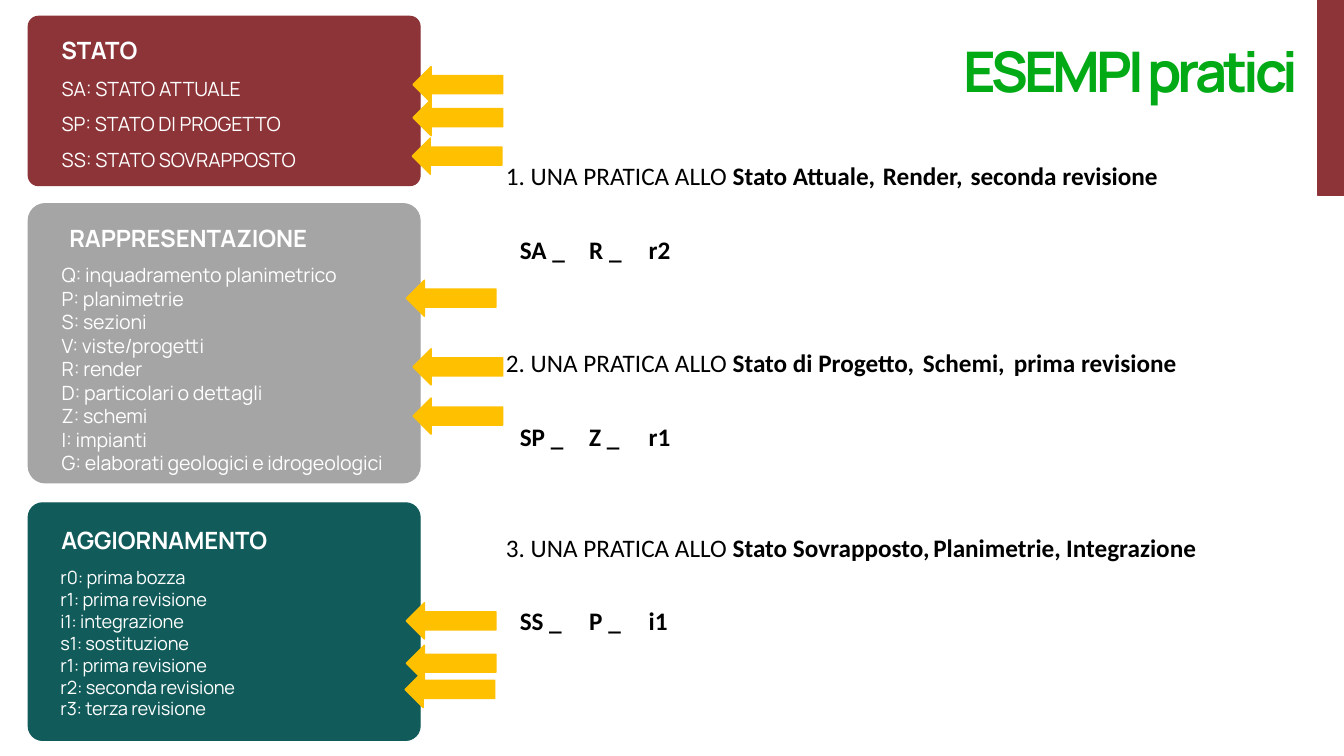
from dataclasses import dataclass

from lxml.etree import SubElement
from pptx import Presentation
from pptx.dml.color import RGBColor
from pptx.enum.shapes import MSO_SHAPE
from pptx.enum.text import MSO_ANCHOR, MSO_AUTO_SIZE, PP_ALIGN
from pptx.oxml.ns import qn
from pptx.util import Cm, Pt


@dataclass(frozen=True)
class Theme:
    red: str = "8C3438"
    grey: str = "A5A5A5"
    teal: str = "115B5A"
    green: str = "02AA16"
    amber: str = "FFC000"
    white: str = "FFFFFF"
    black: str = "000000"
    panel_font: str = "Manrope"
    example_font: str = "Calibri"
    title_size: float = 40
    heading_size: float = 17
    list_size: float = 14
    small_list_size: float = 13
    example_size: float = 18


THEME = Theme()

# colour, top, height; heading left, top; list left, top, width, height;
# list size, line spacing, placeholder index, heading, items
PANELS = [
    (THEME.red, 0.41, 4.27, (1.3, 0.76), (1.3, 1.52, 8.31, 2.87),
     THEME.list_size, 1.5, 1, "STATO",
     ["SA: STATO ATTUALE", "SP: STATO DI PROGETTO", "SS: STATO SOVRAPPOSTO"]),
    (THEME.grey, 5.13, 7.04, (1.5, 5.49), (1.3, 6.5, 10.16, 5.64),
     THEME.list_size, 1.0, 2, "RAPPRESENTAZIONE",
     ["Q: inquadramento planimetrico", "P: planimetrie", "S: sezioni",
      "V: viste/progetti", "R: render", "D: particolari o dettagli",
      "Z: schemi", "I: impianti", "G: elaborati geologici e idrogeologici"]),
    (THEME.teal, 12.67, 5.99, (1.3, 13.11), (1.27, 14.15, 8.31, 4.83),
     THEME.small_list_size, 1.0, 4, "AGGIORNAMENTO",
     ["r0: prima bozza", "r1: prima revisione", "i1: integrazione",
      "s1: sostituzione", "r1: prima revisione", "r2: seconda revisione",
      "r3: terza revisione"]),
]

# top; opening words, bold state, width; further phrases (text, left, width); codes
EXAMPLES = [
    (3.91, "1. UNA PRATICA ALLO ", "Stato Attuale,", 9.96,
     [("Render,", 22, 2.62), ("seconda revisione", 24.21, 5.54)],
     ["SA _", "R _", "r2"]),
    (8.64, "2. UNA PRATICA ALLO ", "Stato di Progetto,", 11.05,
     [("Schemi,", 23.01, 2.74), ("prima revisione", 25.3, 6.83)],
     ["SP _", "Z _", "r1"]),
    (13.28, "3. UNA PRATICA ALLO ", "Stato Sovrapposto,", 11.89,
     [("Planimetrie,", 23.27, 3.94), ("Integrazione", 26.62, 5.54)],
     ["SS _", "P _", "i1"]),
]
CODE_LEFTS = [12.85, 14.6, 16.1]
CODE_DROP = 1.86
LINE_HEIGHT = 1.02

ARROWS = [(10.41, 1.68), (10.41, 2.51), (10.39, 3.48),
          (10.24, 7.06), (10.41, 8.79), (10.41, 10.03),
          (10.24, 15.19), (10.24, 16.26), (10.21, 16.92)]


def set_all(target, values):
    for name, value in values.items():
        setattr(target, name, value)


def place(shape, left, top, width, height):
    set_all(shape, {"left": Cm(left), "top": Cm(top),
                    "width": Cm(width), "height": Cm(height)})


def set_frame(box, anchor):
    set_all(box.text_frame, {"word_wrap": True, "vertical_anchor": anchor,
                             "auto_size": MSO_AUTO_SIZE.SHAPE_TO_FIT_TEXT})


def add_span(para, text, font, size, color, bold=False, spacing=None):
    """Add a run; spacing is the letter spacing in points."""
    span = para.add_run()
    span.text = text
    set_all(span.font, {"name": font, "size": Pt(size), "bold": bold})
    span.font.color.rgb = RGBColor.from_string(color)
    if spacing is not None:
        span.font._element.set("spc", str(round(spacing * 100)))


def add_box(page, frame, anchor=MSO_ANCHOR.TOP):
    """Add a text box and return its first paragraph."""
    box = page.shapes.add_textbox(*map(Cm, frame))
    set_frame(box, anchor)
    return box.text_frame.paragraphs[0]


def add_block(page, kind, frame, color, line_width=1):
    block = page.shapes.add_shape(kind, *map(Cm, frame))
    block.shadow.inherit = False
    block.fill.solid()
    block.fill.fore_color.rgb = RGBColor.from_string(color)
    block.line.color.rgb = RGBColor.from_string(color)
    block.line.width = Pt(line_width)
    return block


def fill_title(page):
    title = page.shapes.title
    place(title, 23.22, -0.43, 10.54, 3.18)
    set_frame(title, MSO_ANCHOR.BOTTOM)
    para = title.text_frame.paragraphs[0]
    set_all(para, {"alignment": PP_ALIGN.CENTER, "line_spacing": Pt(94)})
    add_span(para, "ESEMPI pratici", THEME.panel_font, THEME.title_size,
             THEME.green, bold=True, spacing=-2.9)


def fill_list(body, frame, items, size, line_spacing):
    place(body, *frame)
    set_frame(body, MSO_ANCHOR.TOP)
    for number, item in enumerate(items):
        text = body.text_frame
        para = text.add_paragraph() if number else text.paragraphs[0]
        set_all(para, {"alignment": PP_ALIGN.LEFT, "line_spacing": line_spacing,
                       "space_before": Pt(0), "space_after": Pt(0)})
        properties = para._p.get_or_add_pPr()
        properties.set("marL", "0")
        properties.set("indent", "0")
        SubElement(properties, qn("a:buNone"))
        add_span(para, item, THEME.panel_font, size, THEME.white, spacing=-0.1)


def add_panel(page, color, top, height, heading_at, list_frame, size,
              line_spacing, index, heading, items):
    panel = add_block(page, MSO_SHAPE.ROUNDED_RECTANGLE,
                      (0.71, top, 9.88, height), color, 0.75)
    panel.adjustments[0] = 0.061
    body = page.placeholders[index]
    body.element.addprevious(panel.element)
    fill_list(body, list_frame, items, size, line_spacing)
    para = add_box(page, (*heading_at, 8.31, 0.99), MSO_ANCHOR.BOTTOM)
    add_span(para, heading, THEME.panel_font, THEME.heading_size, THEME.white,
             bold=True, spacing=-0.1)


def add_example(page, top, opening, state, width, phrases, codes):
    style = (THEME.example_font, THEME.example_size, THEME.black)
    para = add_box(page, (12.5, top, width, LINE_HEIGHT))
    add_span(para, opening, *style)
    add_span(para, state, *style, bold=True)
    pieces = [(text, left, top, wide) for text, left, wide in phrases]
    pieces += [(code, left, top + CODE_DROP, 1.75)
               for code, left in zip(codes, CODE_LEFTS)]
    for text, left, piece_top, wide in pieces:
        para = add_box(page, (left, piece_top, wide, LINE_HEIGHT))
        add_span(para, text, *style, bold=True)


def main():
    deck = Presentation()
    set_all(deck, {"slide_width": Cm(33.87), "slide_height": Cm(19.05)})
    page = deck.slides.add_slide(deck.slide_layouts.get_by_name("Comparison"))
    unused = page.placeholders[3].element
    unused.getparent().remove(unused)

    for example in EXAMPLES:
        add_example(page, *example)
    for panel in PANELS:
        add_panel(page, *panel)
    fill_title(page)
    add_block(page, MSO_SHAPE.RECTANGLE, (33.22, 0, 0.64, 4.93), THEME.red)
    for left, top in ARROWS:
        add_block(page, MSO_SHAPE.LEFT_ARROW, (left, top, 2.26, 0.91), THEME.amber)
    deck.save("out.pptx")


if __name__ == "__main__":
    main()
